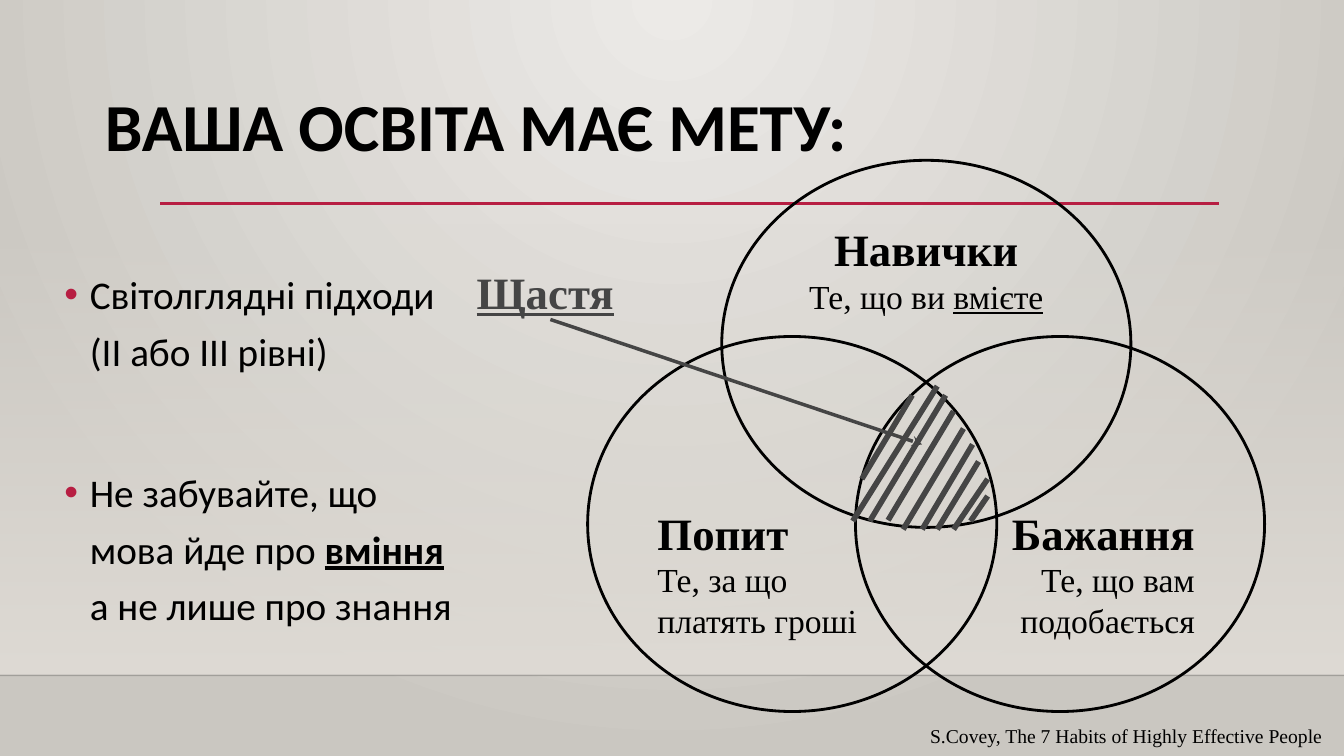
from dataclasses import dataclass
from typing import Any

from lxml.etree import SubElement
from pptx import Presentation
from pptx.dml.color import RGBColor
from pptx.enum.shapes import MSO_CONNECTOR, MSO_SHAPE
from pptx.enum.text import MSO_ANCHOR, MSO_AUTO_SIZE, PP_ALIGN
from pptx.oxml import parse_xml
from pptx.oxml.ns import nsdecls, qn
from pptx.util import Cm, Pt


@dataclass(frozen=True)
class Theme:
    sans: str = "Calibri"
    serif: str = "Times New Roman"
    ink: str = "000000"
    grey: str = "454545"
    accent: str = "B71E42"
    floor: str = "000001"
    panel: str = "DFDBD5"
    bg_inner: str = "ECEAE7"
    bg_outer: str = "CAC7C1"
    title: int = 48
    body: int = 28
    heading: int = 32
    label: int = 24
    source: int = 14


@dataclass(frozen=True)
class Circle:
    box: tuple[float, float, float, float]
    align: PP_ALIGN
    anchor: MSO_ANCHOR
    heading: str
    lines: list[list[tuple[str, bool]]]  # runs of (text, underlined)


@dataclass(frozen=True)
class Line:
    x1: float
    y1: float
    x2: float
    y2: float


T = Theme()
CIRCLES = [
    Circle((18.19, 4.04, 10.31, 9.25), PP_ALIGN.CENTER, MSO_ANCHOR.TOP,
           "Навички", [[("Те, що ви ", False), ("вмієте", True)]]),
    Circle((14.81, 8.48, 10.31, 9.45), PP_ALIGN.LEFT, MSO_ANCHOR.BOTTOM,
           "Попит", [[("Те, за що", False)], [("платять гроші", False)]]),
    Circle((21.56, 8.48, 10.31, 9.45), PP_ALIGN.RIGHT, MSO_ANCHOR.BOTTOM,
           "Бажання", [[("Те, що вам", False)], [("подобається", False)]]),
]
HATCHING = [
    Line(22.99, 9.96, 21.72, 12.07), Line(23.62, 9.73, 21.49, 13.13),
    Line(23.83, 9.96, 21.92, 13.13), Line(24.03, 10.36, 22.38, 13.11),
    Line(24.28, 10.8, 22.76, 13.34), Line(24.51, 11.2, 23.24, 13.34),
    Line(24.66, 11.63, 23.62, 13.34), Line(24.89, 12.07, 24.03, 13.34),
    Line(24.89, 12.5, 24.46, 13.13),
]


def assign(obj: Any, values: dict[str, Any]) -> None:
    for name, value in values.items():
        setattr(obj, name, value)


def place(sp: Any, box: tuple[float, float, float, float]) -> None:
    assign(sp, dict(zip(("left", "top", "width", "height"), map(Cm, box))))


def add_run(p: Any, text: str, font: str, size: int, color: str = T.ink, **style: Any) -> None:
    r = p.add_run()
    r.text = text
    assign(r.font, {"name": font, "size": Pt(size), "bold": False, **style})
    r.font.color.rgb = RGBColor.from_string(color)


def gradient(first: str, last: str, direction: str, first_alpha: int = 100) -> str:
    return (f'<a:gradFill {nsdecls("a")} rotWithShape="1"><a:gsLst>'
            f'<a:gs pos="0"><a:srgbClr val="{first}"><a:alpha val="{first_alpha * 1000}"/>'
            f'</a:srgbClr></a:gs><a:gs pos="100000"><a:srgbClr val="{last}"/></a:gs>'
            f'</a:gsLst>{direction}</a:gradFill>')


def add_line(s: Any, line: Line, color: str, width: float) -> Any:
    ends = map(Cm, (line.x1, line.y1, line.x2, line.y2))
    cn = s.shapes.add_connector(MSO_CONNECTOR.STRAIGHT, *ends)
    cn.line.color.rgb = RGBColor.from_string(color)
    cn.line.width = Pt(width)
    SubElement(cn._element.spPr, qn("a:effectLst"))
    return cn


def add_circle(s: Any, c: Circle) -> None:
    sp = s.shapes.add_shape(MSO_SHAPE.OVAL, *map(Cm, c.box))
    sp.shadow.inherit = False
    sp.fill.background()
    sp.line.color.rgb = RGBColor.from_string(T.ink)
    sp.line.width = Pt(2)
    tf = sp.text_frame
    assign(tf, {"word_wrap": True, "vertical_anchor": c.anchor,
                "margin_top": Cm(0.2), "margin_bottom": Cm(0.42)})
    p = tf.paragraphs[0]
    p.alignment = c.align
    add_run(p, c.heading, T.serif, T.heading, bold=True)
    for runs in c.lines:
        p = tf.add_paragraph()
        p.alignment = c.align
        for text, underlined in runs:
            add_run(p, text, T.serif, T.label, underline=underlined)


def add_label(s: Any, box: tuple[float, float, float, float], text: str, size: int,
              color: str, **style: Any) -> None:
    tf = s.shapes.add_textbox(*map(Cm, box)).text_frame
    tf.word_wrap = False
    add_run(tf.paragraphs[0], text, T.serif, size, color, **style)


def add_backdrop(s: Any) -> None:
    centre = '<a:path path="circle"><a:fillToRect l="43000" t="0" r="43000" b="100000"/></a:path>'
    s.background.fill.solid()
    bg_pr = s.background._cSld.bg.bgPr
    bg_pr.replace(bg_pr[0], parse_xml(gradient(T.bg_inner, T.bg_outer, centre)))

    panel = s.shapes.add_shape(MSO_SHAPE.RECTANGLE, *map(Cm, (0, 5.61, 33.87, 11.4)))
    panel.shadow.inherit = False
    panel.line.fill.background()
    panel.fill.solid()
    solid = panel._element.spPr.find(qn("a:solidFill"))
    down = '<a:lin ang="5400000" scaled="0"/>'
    panel._element.spPr.replace(solid, parse_xml(gradient(T.panel, T.panel, down, 0)))

    floor = add_line(s, Line(0, 17.02, 33.87, 17.02), T.floor, 1)
    SubElement(next(floor._element.iter(qn("a:srgbClr"))), qn("a:alpha"), val="20000")
    rule = add_line(s, Line(4.04, 5.13, 30.73, 5.13), T.accent, 2.5)
    for i, sp in enumerate((panel, floor, rule)):  # behind the placeholders
        s.shapes._spTree.insert(2 + i, sp._element)


def fill_title(s: Any) -> None:
    sp = s.shapes.title
    place(sp, (2.39, 2.24, 28.32, 2.92))
    assign(sp.text_frame, {"vertical_anchor": MSO_ANCHOR.TOP, "word_wrap": True,
                           "auto_size": MSO_AUTO_SIZE.NONE})
    p = sp.text_frame.paragraphs[0]
    assign(p, {"alignment": PP_ALIGN.LEFT, "line_spacing": 0.9})
    add_run(p, "ВАША ОСВІТА МАЄ МЕТУ:", T.sans, T.title, bold=True)


def fill_body(s: Any) -> None:
    sp = s.placeholders[1]
    place(sp, (1.37, 6.45, 10.62, 4.78))
    tf = sp.text_frame
    assign(tf, {"vertical_anchor": MSO_ANCHOR.TOP, "word_wrap": True,
                "auto_size": MSO_AUTO_SIZE.NONE})
    items = [
        (0, [("Світолглядні підходи (ІІ або ІІІ рівні)", False)]),
        (61, [("Не забувайте, що мова йде про ", False), ("вміння", True),
              (" а не лише про знання", False)]),
    ]
    for i, (gap, runs) in enumerate(items):
        p = tf.add_paragraph() if i else tf.paragraphs[0]
        pPr = p._p.get_or_add_pPr()
        pPr.set("marL", str(Cm(0.64)))
        pPr.set("indent", str(-Cm(0.64)))
        SubElement(SubElement(pPr, qn("a:buClr")), qn("a:srgbClr"), val=T.accent)
        SubElement(pPr, qn("a:buChar"), char="•")
        assign(p, {"line_spacing": 1.2, "space_before": Pt(gap)})
        for text, strong in runs:
            add_run(p, text, T.sans, T.body, bold=strong, underline=strong)


def main() -> None:
    prs = Presentation()
    assign(prs, {"slide_width": Cm(33.87), "slide_height": Cm(19.05)})
    s = prs.slides.add_slide(prs.slide_layouts[1])

    # Backdrop and text
    add_backdrop(s)
    fill_title(s)
    fill_body(s)

    # Three overlapping circles with a hatched centre
    for circle in CIRCLES:
        add_circle(s, circle)
    for stroke in HATCHING:
        add_line(s, stroke, T.grey, 4)

    # Arrow from the label to the centre
    arrow = add_line(s, Line(13.87, 8.05, 23.24, 11.2), T.grey, 2.5)
    SubElement(arrow.line._get_or_add_ln(), qn("a:tailEnd"), type="stealth")
    add_label(s, (11.76, 6.55, 4.01, 1.63), "Щастя", T.heading, T.grey, bold=True, underline=True)

    # Source
    add_label(s, (23.19, 18.11, 10.44, 0.84),
              "S.Covey, The 7 Habits of Highly Effective People", T.source, T.ink)
    prs.save("out.pptx")


if __name__ == "__main__":
    main()
